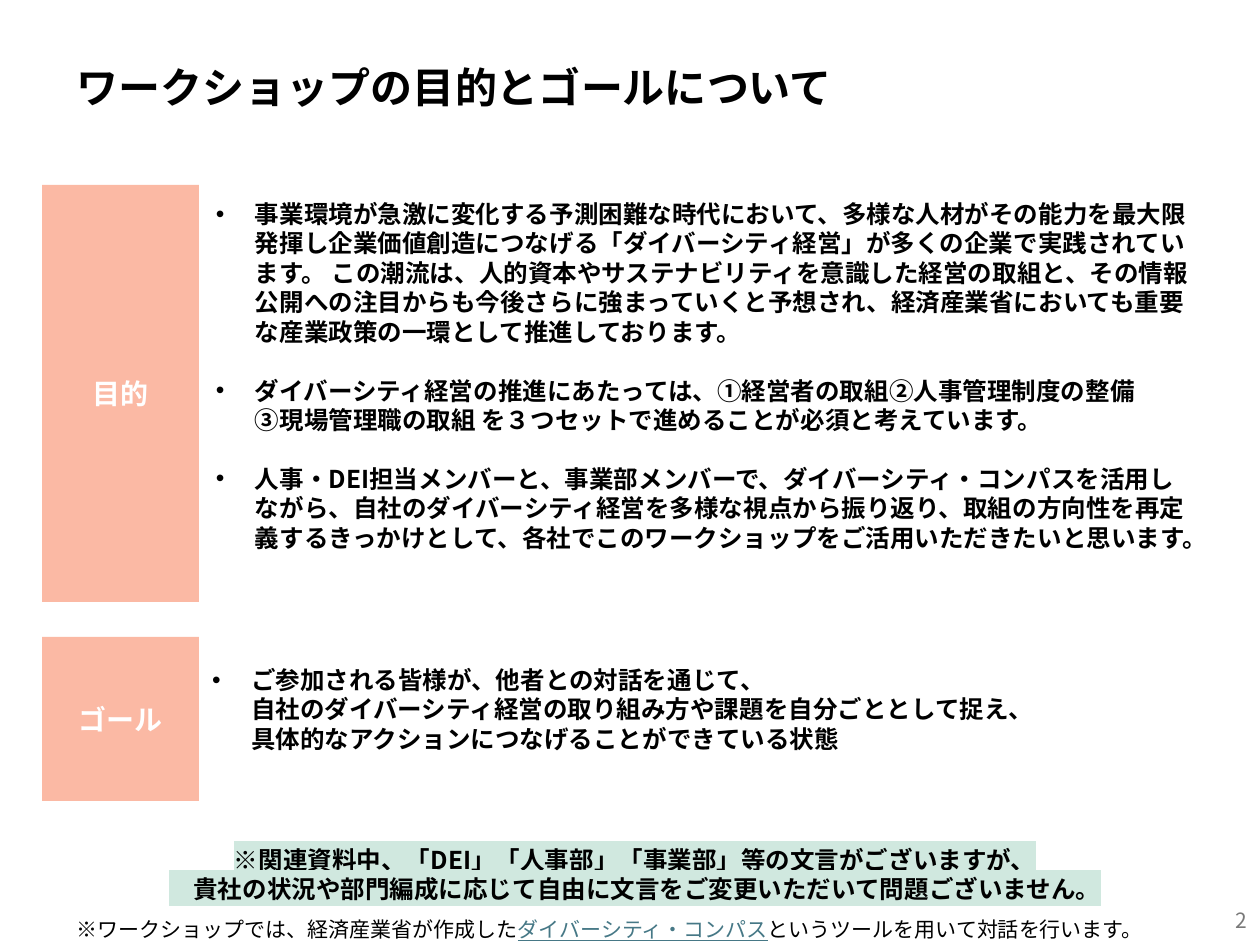
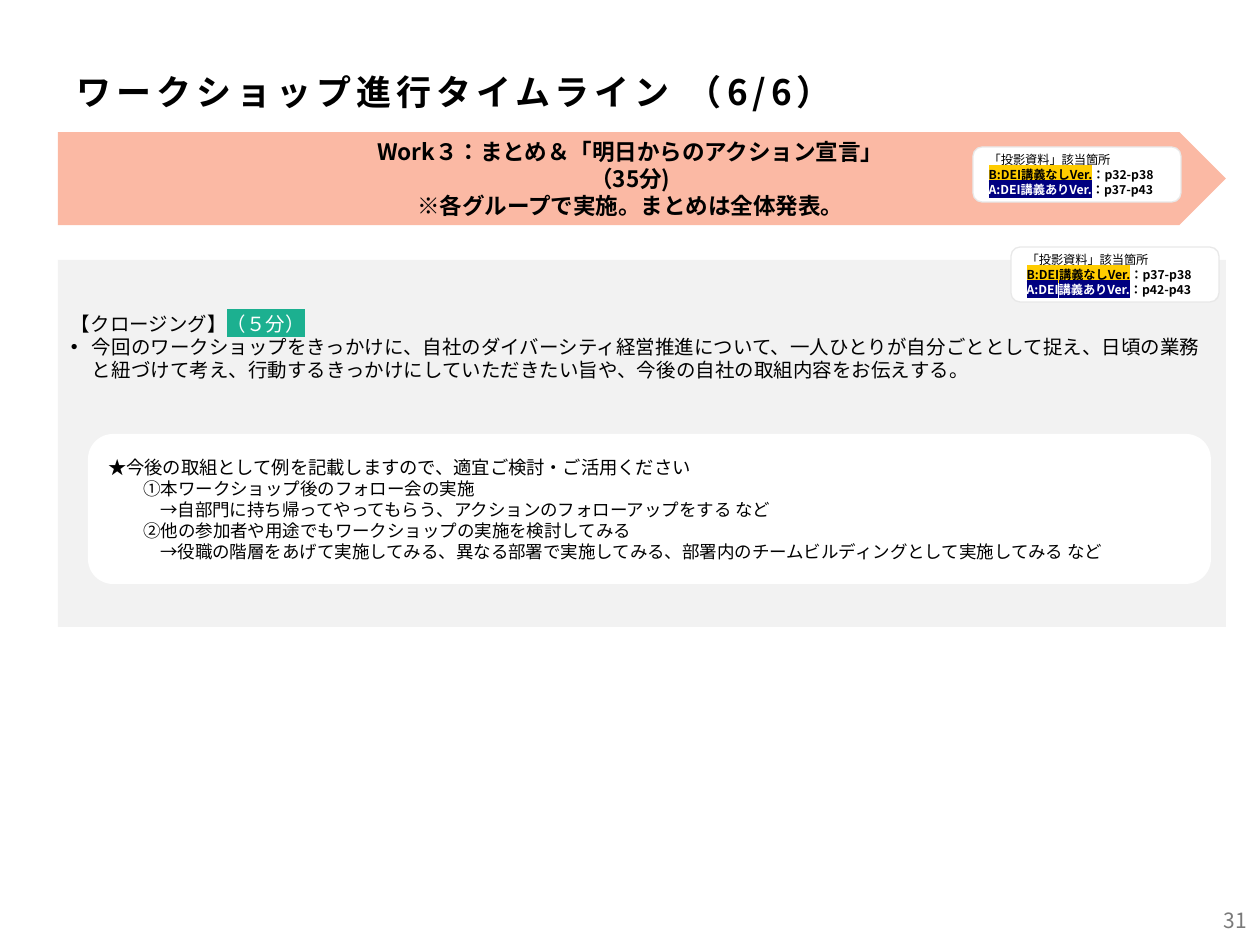
from lxml import etree
from pptx import Presentation
from pptx.dml.color import RGBColor
from pptx.enum.lang import MSO_LANGUAGE_ID as LANG
from pptx.enum.shapes import MSO_SHAPE as SHAPE
from pptx.enum.text import MSO_ANCHOR as ANCHOR, MSO_AUTO_SIZE as AUTO, PP_ALIGN as ALIGN
from pptx.oxml.ns import qn
from pptx.util import Emu, Pt

# Shared style
PX = 914400 / 126
FONT = "Noto Sans CJK JP"
BLACK, WHITE, GREY, LINK = "000000", "FFFFFF", "797979", "467886"
SALMON, PANEL, EDGE = "FBB9A4", "F2F2F2", "E8E8E8"
MINT, GREEN, YELLOW, NAVY = "D0E8DF", "1CB090", "FFCC00", "000080"
LEADING = 1.2


def px(n):
    return Emu(round(n * PX))


def rgb(value):
    return RGBColor.from_string(value)


def add_run(p, text, size=14, color=BLACK, bold=False, underline=False,
            highlight=None, spacing=None):
    """Add text to a paragraph; a newline becomes a line break."""
    for i, part in enumerate(text.split("\n")):
        if i:
            p.add_line_break()
        r = p.add_run()
        r.text = part
        f = r.font
        f.size, f.bold, f.underline = Pt(size), bold, underline
        f.language_id = LANG.JAPANESE
        f.color.rgb = rgb(color)
        rPr = r._r.get_or_add_rPr()
        if highlight:
            mark = etree.SubElement(rPr, qn("a:highlight"))
            etree.SubElement(mark, qn("a:srgbClr"), val=highlight)
        if spacing:
            rPr.set("spc", str(round(spacing * 100)))
        f.name = FONT
        etree.SubElement(rPr, qn("a:ea"), typeface=FONT)


def para(*runs, **fmt):
    """A paragraph: runs are strings or (text, format) pairs."""
    return runs, fmt


class Deck:
    def __init__(self):
        self.prs = Presentation()
        self.prs.slide_width, self.prs.slide_height = px(1260), px(945)

    def new_slide(self, layout, title, number, box, **fmt):
        self.s = self.prs.slides.add_slide(self.prs.slide_layouts[layout])
        self.holder(0, box, [para(title, bold=True, **fmt)], anchor=ANCHOR.MIDDLE)
        self.text((976, 895, 284, 50),
                  [para(number, size=12, color=GREY, align=ALIGN.RIGHT)])

    def fill_text(self, sp, paras, anchor=ANCHOR.MIDDLE, top=6):
        tf = sp.text_frame
        tf.word_wrap, tf.auto_size, tf.vertical_anchor = True, AUTO.NONE, anchor
        tf.margin_left = tf.margin_right = px(13)
        tf.margin_top, tf.margin_bottom = px(top), px(6)
        for i, (runs, fmt) in enumerate(paras):
            p = tf.add_paragraph() if i else tf.paragraphs[0]
            self.paragraph(p, runs, **fmt)

    def paragraph(self, p, runs, size=14, align=ALIGN.LEFT, bullet=False,
                  indent=0, before=0, leading=None, **fmt):
        pPr = p._p.get_or_add_pPr()
        pPr.set("marL", str(px(indent)))
        pPr.set("indent", str(px(-indent if bullet else 0)))
        if bullet:
            etree.SubElement(pPr, qn("a:buFont"), typeface="Arial")
            etree.SubElement(pPr, qn("a:buChar"), char="•")
        else:
            etree.SubElement(pPr, qn("a:buNone"))
        p.alignment = align
        p.line_spacing = Pt(leading or round(size * LEADING, 1))
        p.space_before, p.space_after = Pt(before), Pt(0)
        for r in runs:
            text, own = (r, {}) if isinstance(r, str) else r
            add_run(p, text, **{"size": size, **fmt, **own})

    def holder(self, idx, box, paras, fill=None, **frame):
        sp = self.s.placeholders[idx]
        sp.left, sp.top, sp.width, sp.height = map(px, box)
        if fill:
            sp.fill.solid()
            sp.fill.fore_color.rgb = rgb(fill)
        self.fill_text(sp, paras, **frame)

    def text(self, box, paras, **frame):
        self.fill_text(self.s.shapes.add_textbox(*map(px, box)), paras, **frame)

    def shape(self, kind, box, fill, paras, line=None):
        sp = self.s.shapes.add_shape(kind, *map(px, box))
        sp.shadow.inherit = False
        sp.fill.solid()
        sp.fill.fore_color.rgb = rgb(fill)
        if line:
            sp.line.color.rgb = rgb(line)
            sp.line.width = Pt(0.75)
        else:
            sp.line.fill.background()
        self.fill_text(sp, paras)

    def label(self, top, height, text):
        self.shape(SHAPE.RECTANGLE, (42, top, 157, height), SALMON,
                   [para(text, size=16, color=WHITE, bold=True, align=ALIGN.CENTER)])

    def page_tag(self, left, top, pages_b, pages_a):
        """Small card naming the matching pages of both versions."""
        on_b = {"highlight": YELLOW}
        on_a = {"highlight": NAVY, "color": WHITE}
        self.shape(SHAPE.ROUNDED_RECTANGLE, (left, top, 208, 55), WHITE, [
            para("「投影資料」該当箇所", size=7),
            para(("B", {**on_b, "underline": True}), (":DEI講義なしVer.", on_b),
                 "：" + pages_b, size=7, bold=True),
            para(("A:DEI講義ありVer.", on_a), "：" + pages_a, size=7, bold=True),
        ], line=EDGE)


def purpose_slide(d):
    d.new_slide(3, "ワークショップの目的とゴールについて", "2", (64, 18, 1086, 137), size=24)

    # Purpose and goal, each a label with a list
    item = {"bold": True, "bullet": True, "indent": 39}
    purposes = [
        "事業環境が急激に変化する予測困難な時代において、多様な人材がその能力を最大限発揮し企業価値創造につなげる「ダイバーシティ経営」が多くの企業で実践されています。 この潮流は、人的資本やサステナビリティを意識した経営の取組と、その情報公開への注目からも今後さらに強まっていくと予想され、経済産業省においても重要な産業政策の一環として推進しております。",
        "ダイバーシティ経営の推進にあたっては、①経営者の取組②人事管理制度の整備\n③現場管理職の取組 を３つセットで進めることが必須と考えています。",
        "人事・DEI担当メンバーと、事業部メンバーで、ダイバーシティ・コンパスを活用しながら、自社のダイバーシティ経営を多様な視点から振り返り、取組の方向性を再定義するきっかけとして、各社でこのワークショップをご活用いただきたいと思います。",
    ]
    d.label(185, 417, "目的")
    d.holder(1, (203, 193, 1006, 398),
             [para(t, before=16.8 if i else 0, **item) for i, t in enumerate(purposes)],
             anchor=ANCHOR.TOP)
    d.label(637, 164, "ゴール")
    d.holder(2, (199, 658, 992, 102), [para(
        "ご参加される皆様が、他者との対話を通じて、\n"
        "自社のダイバーシティ経営の取り組み方や課題を自分ごととして捉え、\n"
        "具体的なアクションにつなげることができている状態", **item)],
        anchor=ANCHOR.MIDDLE)

    # Notes at the foot
    d.text((10, 838, 1250, 72), [para(
        "※関連資料中、「DEI」「人事部」「事業部」等の文言がございますが、\n"
        "　貴社の状況や部門編成に応じて自由に文言をご変更いただいて問題ございません。",
        bold=True, highlight=MINT, align=ALIGN.CENTER)])
    d.text((64, 906, 1203, 39), [para(
        "※ワークショップでは、経済産業省が作成した",
        ("ダイバーシティ・コンパス", {"color": LINK, "underline": True}),
        "というツールを用いて対話を行います。", size=12, leading=16.8)],
        anchor=ANCHOR.TOP)


def timeline_slide(d):
    d.new_slide(1, "ワークショップ進行タイムライン （6/6）", "31", (64, 0, 1086, 183),
                size=20, spacing=2.8)

    # Closing panel
    d.holder(1, (58, 260, 1168, 367), [
        para("【クロージング】", ("（５分）", {"color": WHITE, "highlight": GREEN}), size=11.1),
        para("今回のワークショップをきっかけに、自社のダイバーシティ経営推進について、一人ひとりが自分ごととして捉え、日頃の業務と紐づけて考え、行動するきっかけにしていただきたい旨や、今後の自社の取組内容をお伝えする。",
             size=11.1, bullet=True, indent=21),
    ], fill=PANEL, anchor=ANCHOR.TOP, top=52)

    # Work banner
    d.shape(SHAPE.PENTAGON, (58, 132, 1168, 93), SALMON, [
        para(t, size=12.9, bold=True, align=ALIGN.CENTER) for t in (
            "Work３：まとめ＆「明日からのアクション宣言」", "（35分)",
            "※各グループで実施。まとめは全体発表。")])

    # Example card
    idea, detail = {"size": 10, "indent": 35}, {"size": 10, "indent": 52}
    d.shape(SHAPE.ROUNDED_RECTANGLE, (88, 434, 1123, 150), WHITE, [
        para("★今後の取組として例を記載しますので、適宜ご検討・ご活用ください", size=10.5),
        para("①本ワークショップ後のフォロー会の実施", **idea),
        para("→自部門に持ち帰ってやってもらう、アクションのフォローアップをする など", **detail),
        para("②他の参加者や用途でもワークショップの実施を検討してみる", **idea),
        para("→役職の階層をあげて実施してみる、異なる部署で実施してみる、部署内のチームビルディングとして実施してみる など", **detail),
    ])

    # Page references
    d.page_tag(973, 147, "p32-p38", "p37-p43")
    d.page_tag(1011, 247, "p37-p38", "p42-p43")


def main():
    d = Deck()
    purpose_slide(d)
    timeline_slide(d)
    d.prs.save("out.pptx")


if __name__ == "__main__":
    main()
